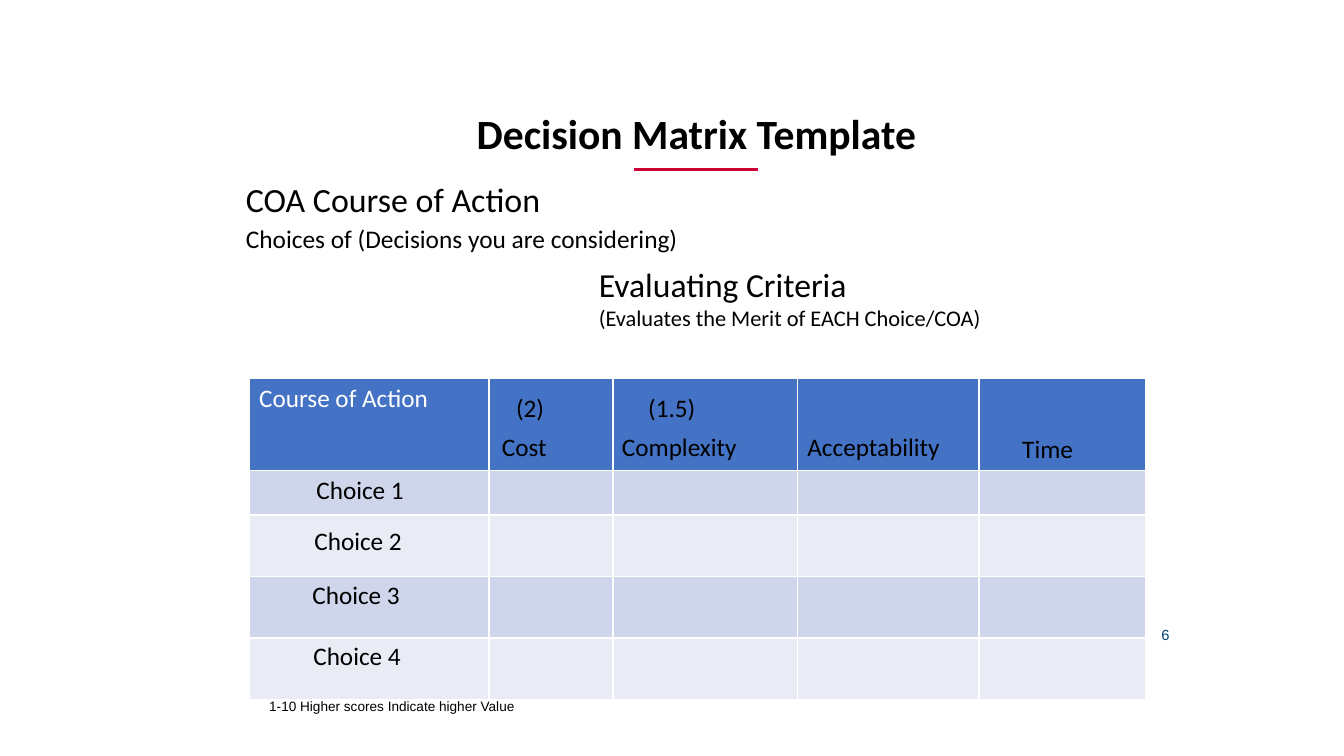
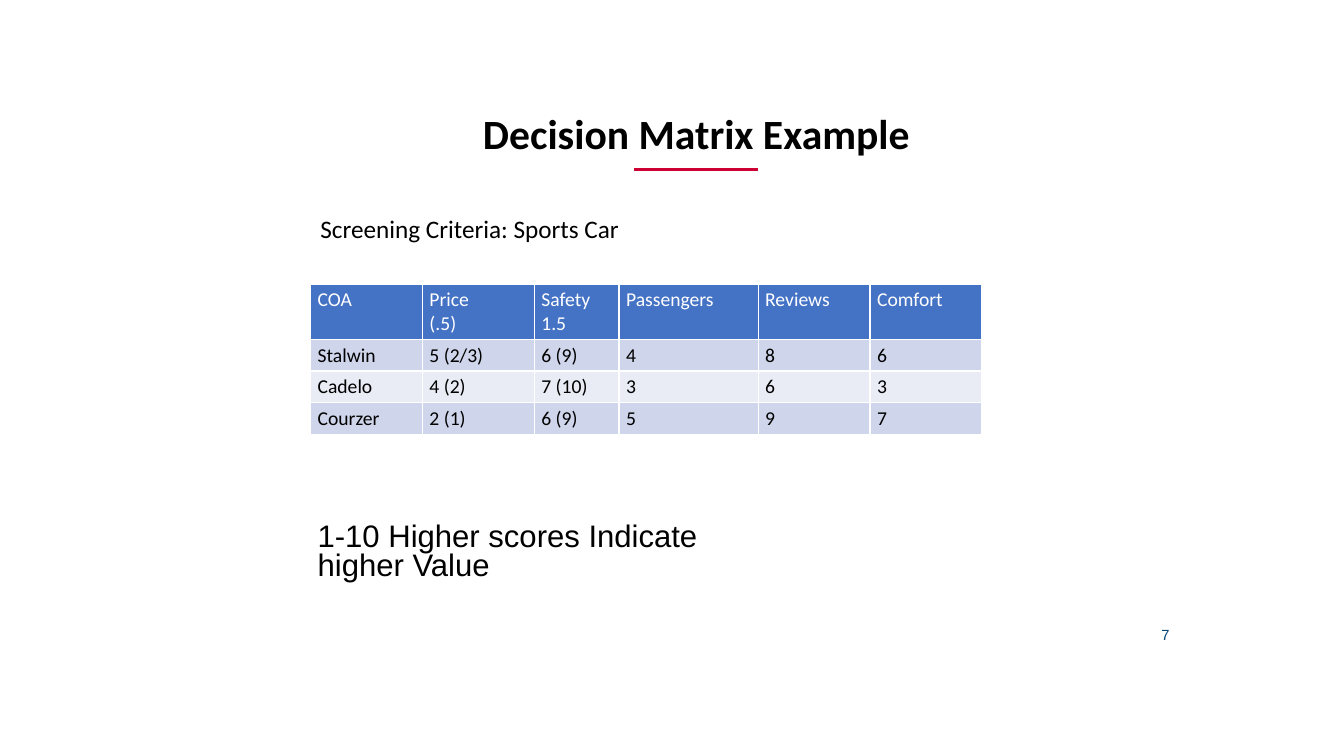
from lxml import etree
from pptx import Presentation
from pptx import util as u
from pptx.dml.color import RGBColor
from pptx.enum import shapes, text
from pptx.oxml import ns

Inches = u.Inches
COLORS = {
    "ink": "000000", "white": "FFFFFF", "accent": "CC0033", "number": "004474",
    "header": "4472C4", "odd": "CFD5EA", "even": "E9EBF5",
}
ROOMY, TIGHT = (0.1, 0.05), (0.07, 0.04)
LEFT, RIGHT, CENTER = text.PP_ALIGN.LEFT, text.PP_ALIGN.RIGHT, text.PP_ALIGN.CENTER


def write(target, wording, at=None, sizes=(18,), font="Calibri", color="ink",
          bold=False, align=LEFT, spacing=1.0, before=0, margins=ROOMY,
          middle=False, wrap=True):
    """Write into a table cell, or into a new text box when a place is given."""
    if at:
        target = target.shapes.add_textbox(*map(Inches, at))
        target.text_frame.word_wrap = wrap
    frame = target.text_frame
    holder = frame if at else target
    holder.margin_left = holder.margin_right = Inches(margins[0])
    holder.margin_top = holder.margin_bottom = Inches(margins[1])
    holder.vertical_anchor = text.MSO_ANCHOR.MIDDLE if middle else text.MSO_ANCHOR.TOP
    frame.text = wording
    for index, paragraph in enumerate(frame.paragraphs):
        paragraph.alignment = align
        paragraph.line_spacing = spacing
        paragraph.space_before = u.Pt(before)
        paragraph.font.size = u.Pt(sizes[min(index, len(sizes) - 1)])
        paragraph.font.name = font
        paragraph.font.bold = bold
        paragraph.font.color.rgb = RGBColor.from_string(COLORS[color])


def add_matrix(slide, at, widths, heights, rows, size, margins):
    """Add a table with a dark header, banded rows and white rules."""
    table = slide.shapes.add_table(
        len(heights), len(widths), Inches(at[0]), Inches(at[1]),
        Inches(sum(widths)), Inches(sum(heights))).table
    for column, width in zip(table.columns, widths):
        column.width = Inches(width)
    for r, (row, height) in enumerate(zip(table.rows, heights)):
        row.height = Inches(height)
        band = "header" if r == 0 else ("even", "odd")[r % 2]
        for c, cell in enumerate(row.cells):
            if r < len(rows) and c < len(rows[r]):
                write(cell, rows[r][c], sizes=(size,), margins=margins,
                      color="ink" if r else "white")
            for side in ("lnL", "lnR", "lnT", "lnB"):
                rule = etree.SubElement(cell._tc.get_or_add_tcPr(),
                                        ns.qn("a:" + side), w=str(u.Pt(1)))
                fill = etree.SubElement(rule, ns.qn("a:solidFill"))
                etree.SubElement(fill, ns.qn("a:srgbClr"), val=COLORS["white"])
            cell.fill.solid()
            cell.fill.fore_color.rgb = RGBColor.from_string(
                COLORS[band if r == 0 else ("odd" if r % 2 else "even")])


deck = Presentation()
deck.slide_width, deck.slide_height = Inches(13.33), Inches(7.5)

# Shared title, accent rule and slide number
pages = []
for number, title in enumerate(("Decision Matrix Template", "Decision Matrix Example"), 6):
    page = deck.slides.add_slide(deck.slide_layouts[6])
    accent = page.shapes.add_connector(
        shapes.MSO_CONNECTOR.STRAIGHT, Inches(7.52), Inches(1.68), Inches(6.29), Inches(1.68))
    accent.line.color.rgb = RGBColor.from_string(COLORS["accent"])
    accent.line.width = u.Pt(2.25)
    etree.SubElement(accent._element.spPr, ns.qn("a:effectLst"))
    write(page, title, (2.6, 1.05, 8.62, 0.59), sizes=(29.7,), bold=True,
          align=CENTER, spacing=0.9, middle=True)
    write(page, str(number), (9.92, 6.15, 1.75, 0.3), sizes=(10.5,), font="Arial",
          color="number", align=RIGHT, margins=TIGHT, middle=True)
    pages.append(page)
template, example = pages
SCORE_NOTE = "1-10 Higher scores Indicate higher Value"

# Template: introduction and scoring note
write(template, "COA Course of Action\nChoices of (Decisions you are considering)",
      (2.34, 1.83, 5.14, 1.01), sizes=(24.2, 18.1), spacing=0.7, before=10)
write(template, SCORE_NOTE, (2.6, 6.92, 2.81, 0.22), sizes=(9.7,), font="Arial",
      spacing=0.8, before=10, margins=TIGHT)

# Template: blank matrix
add_matrix(template, (2.47, 3.75), (2.38, 1.23, 1.83, 1.8, 1.65),
           (0.92, 0.44, 0.61, 0.61, 0.61), [["Course of Action"]], 18, ROOMY)
write(template, "Evaluating Criteria\n(Evaluates the Merit of EACH Choice/COA)",
      (5.84, 2.57, 5.39, 0.77), sizes=(24, 16))

# Template: choices, criteria and weights over the matrix
for choice, (left, top) in enumerate(((3.04, 4.66), (3.02, 5.16), (3, 5.7), (3.01, 6.3)), 1):
    write(template, f"Choice {choice}", (left, top, 1.5, 0.4))
for label, left, top, width in (
        ("Time", 10.04, 4.25, 0.71), ("Cost", 4.88, 4.23, 0.65),
        ("Complexity", 6.07, 4.23, 1.35), ("Acceptability", 7.91, 4.23, 1.53),
        ("(2)", 5.02, 3.84, 0.48), ("(1.5)", 6.33, 3.84, 0.68)):
    write(template, label, (left, top, width, 0.4), wrap=False)

# Example: scored matrix
add_matrix(example, (3.08, 2.82), (1.11, 1.11, 0.84, 1.38, 1.11, 1.11),
           (0.53, 0.3, 0.3, 0.3), [
               ["COA", "Price\n(.5)", "Safety\n1.5", "Passengers", "Reviews", "Comfort"],
               ["Stalwin", "5 (2/3)", "6 (9)", "4", "8", "6"],
               ["Cadelo", "4 (2)", "7 (10)", "3", "6", "3"],
               ["Courzer", "2 (1)", "6 (9)", "5", "9", "7"],
           ], 14, TIGHT)

# Example: scoring note and screening criteria
write(example, SCORE_NOTE, (3.08, 5.15, 4.31, 0.67), sizes=(22.2,), font="Arial",
      spacing=0.8, before=10, margins=TIGHT)
write(example, "Screening Criteria: Sports Car", (3.08, 2.07, 3.83, 0.4))

deck.save("out.pptx")
